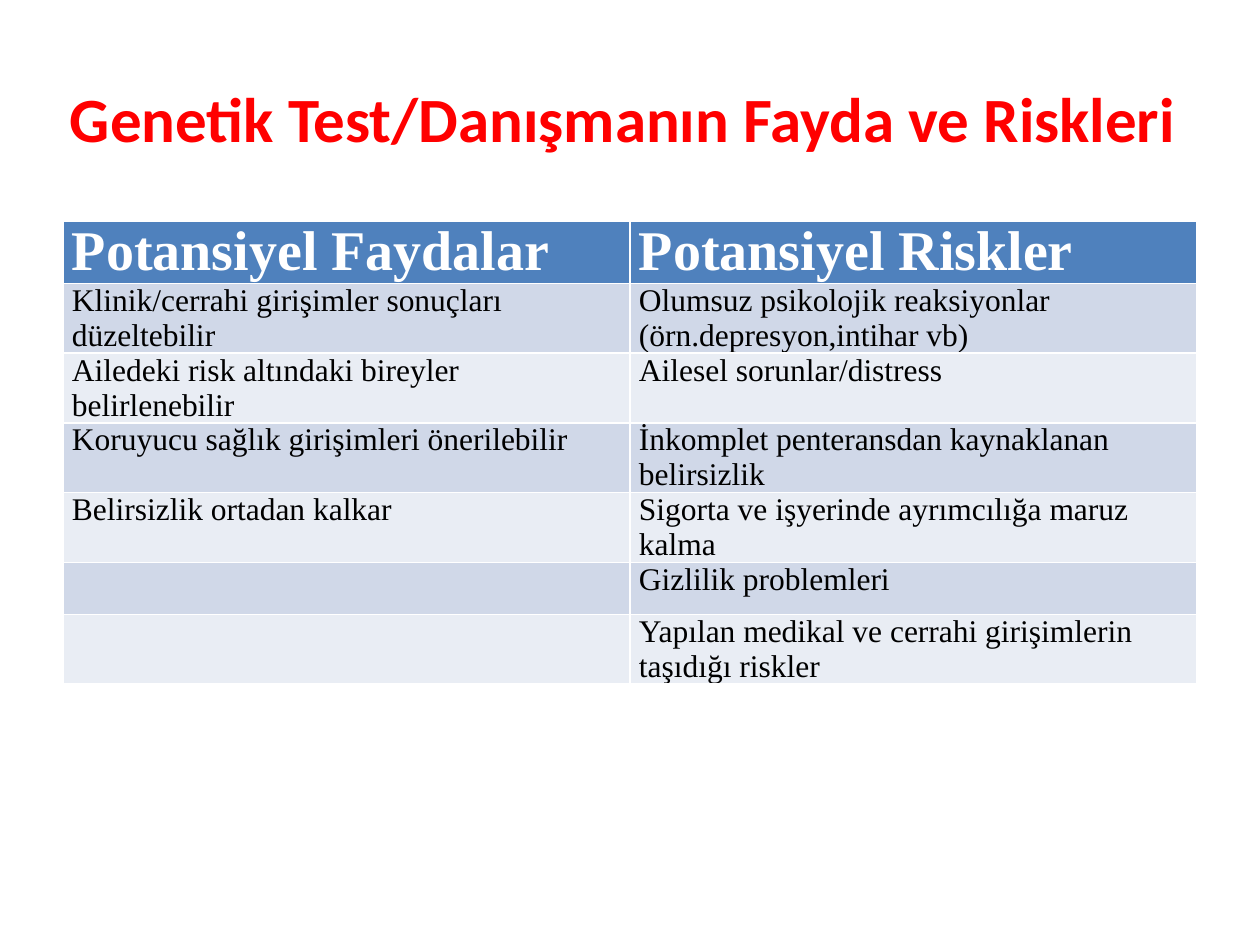
from typing import Any, NamedTuple

import pptx
import pptx.dml.color
import pptx.enum.text
import pptx.util

PX_PER_INCH = 126


class Box(NamedTuple):
    left: int
    top: int
    width: int
    height: int


class CellStyle(NamedTuple):
    fill: str
    color: str
    size: int
    bold: bool


class Comparison(NamedTuple):
    benefit: str
    risk: str


TITLE = "Genetik Test/Danışmanın Fayda ve Riskleri"
TITLE_BOX = Box(49, 38, 1148, 158)
TABLE_BOX = Box(63, 221, 1134, 364)
CELL_INSET = 9

HEADER = CellStyle("4F81BD", "FFFFFF", 32, True)
BANDS = (
    CellStyle("E9EDF4", "000000", 18, False),
    CellStyle("D0D8E8", "000000", 18, False),
)

COMPARISONS = [
    Comparison("Potansiyel Faydalar", "Potansiyel Riskler"),
    Comparison(
        "Klinik/cerrahi girişimler sonuçları düzeltebilir",
        "Olumsuz psikolojik reaksiyonlar (örn.depresyon,intihar vb)",
    ),
    Comparison(
        "Ailedeki risk altındaki bireyler belirlenebilir",
        "Ailesel sorunlar/distress",
    ),
    Comparison(
        "Koruyucu sağlık girişimleri önerilebilir",
        "İnkomplet penteransdan kaynaklanan belirsizlik",
    ),
    Comparison(
        "Belirsizlik ortadan kalkar",
        "Sigorta ve işyerinde ayrımcılığa maruz kalma",
    ),
    Comparison("", "Gizlilik problemleri"),
    Comparison("", "Yapılan medikal ve cerrahi girişimlerin taşıdığı riskler"),
]


def px(length: int) -> pptx.util.Emu:
    return pptx.util.Emu(round(length * 914400 / PX_PER_INCH))


def rgb(color: str) -> pptx.dml.color.RGBColor:
    return pptx.dml.color.RGBColor.from_string(color)


def apply(target: Any, values: dict[str, Any]) -> None:
    for name, value in values.items():
        setattr(target, name, value)


def format_font(font: Any, name: str, size: int, color: str, bold: bool) -> None:
    apply(font, {"name": name, "size": pptx.util.Pt(size), "bold": bold})
    font.color.rgb = rgb(color)


def draw_title(slide: Any, text: str, box: Box) -> None:
    title = slide.shapes.title
    apply(title, {name: px(length) for name, length in box._asdict().items()})
    title.text_frame.text = text
    apply(title.text_frame, {
        "word_wrap": True,
        "vertical_anchor": pptx.enum.text.MSO_ANCHOR.MIDDLE,
    })
    paragraph = title.text_frame.paragraphs[0]
    paragraph.alignment = pptx.enum.text.PP_ALIGN.CENTER
    format_font(paragraph.runs[0].font, "Calibri", 36, "FF0000", True)


def fill_cell(cell: Any, text: str, style: CellStyle) -> None:
    apply(cell, {
        "margin_left": px(CELL_INSET),
        "margin_right": px(CELL_INSET),
        "margin_top": 0,
        "margin_bottom": 0,
    })
    cell.fill.solid()
    cell.fill.fore_color.rgb = rgb(style.fill)
    if text:
        run = cell.text_frame.paragraphs[0].add_run()
        run.text = text
        format_font(run.font, "Times New Roman", style.size, style.color, style.bold)


def draw_comparisons(slide: Any, comparisons: list[Comparison], box: Box) -> None:
    table = slide.shapes.add_table(
        len(comparisons), len(Comparison._fields), *map(px, box)
    ).table
    for row, comparison in enumerate(comparisons):
        style = BANDS[row % 2] if row else HEADER
        for column, text in enumerate(comparison):
            fill_cell(table.cell(row, column), text, style)


def main() -> None:
    presentation = pptx.Presentation()
    apply(presentation, {"slide_width": px(1260), "slide_height": px(945)})
    slide = presentation.slides.add_slide(presentation.slide_layouts[5])
    draw_title(slide, TITLE, TITLE_BOX)
    draw_comparisons(slide, COMPARISONS, TABLE_BOX)
    presentation.save("out.pptx")


if __name__ == "__main__":
    main()
